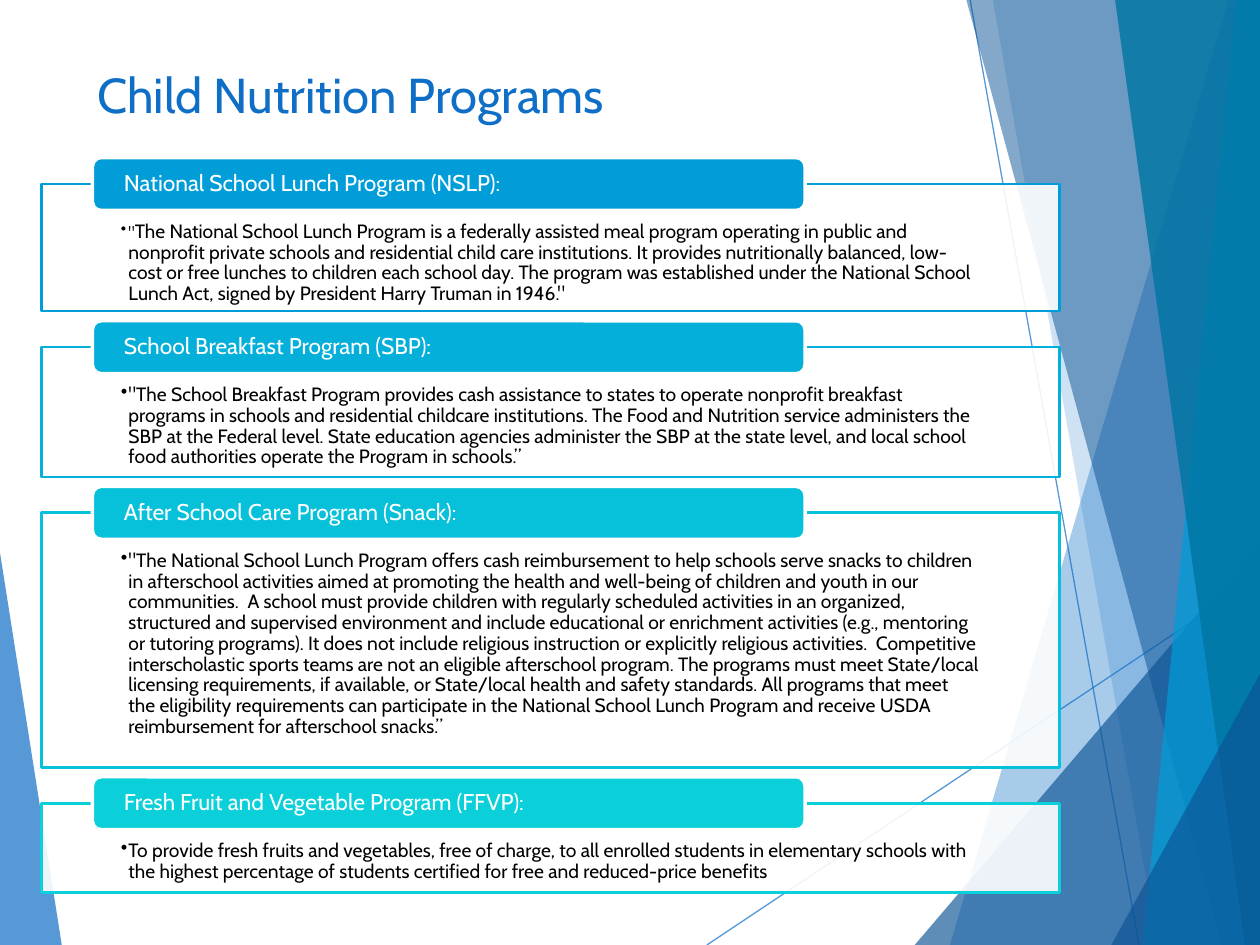
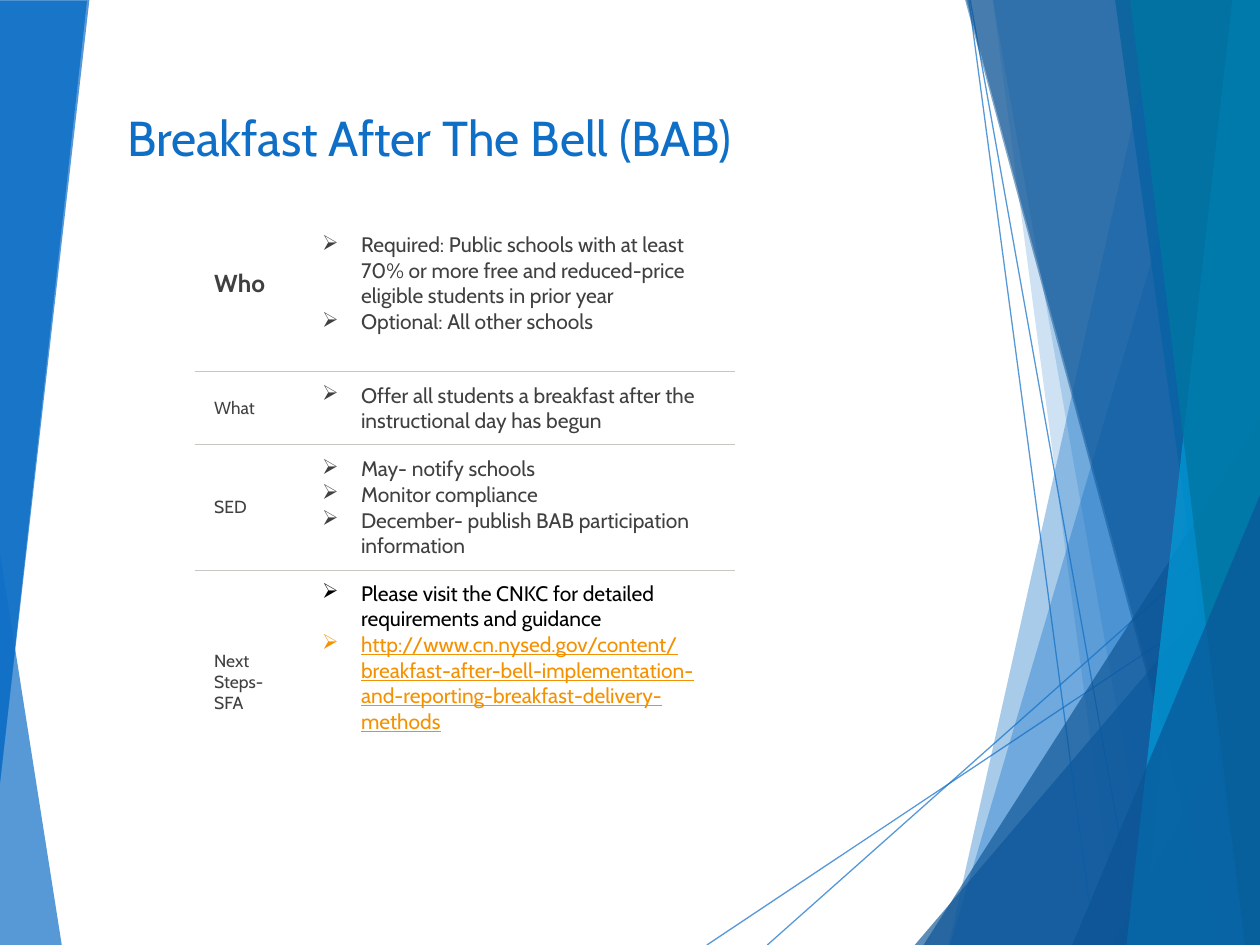
from lxml.etree import SubElement
from pptx import Presentation
from pptx.dml.color import RGBColor
from pptx.enum.shapes import MSO_CONNECTOR, MSO_SHAPE
from pptx.enum.text import MSO_ANCHOR, PP_ALIGN
from pptx.oxml.ns import qn
from pptx.util import Emu, Inches, Pt

WIDTH, HEIGHT = Inches(10), Inches(7.5)
FONT = "Cabin"
COLORS = {
    "blue": "0F6FC6", "navy": "0B5394", "sky": "009DD9", "teal": "0076A3",
    "lunch": "009DD9", "breakfast": "04AFD9", "snack": "07C0D9", "fruit": "0BD0D9",
    "white": "FFFFFF", "black": "000000", "gray": "404040",
    "rule": "C7C6C1", "link": "F49100",
}

BACKDROP = [
    ("ribbon", 0, 58.5, 4.9, 100, "blue", 70),
    ("line", 56.1, 100, 100, 61, "blue", 70),
    ("line", 77, 0, 90.4, 100, "blue", 70),
    ("ribbon", 97.5, 0, 75.4, 100, "blue", 36),
    ("ribbon", 78.8, 0, 91.9, 100, "blue", 20),
    ("wedge", 100, 57.2, 72.6, 100, "navy", 66),
    ("ribbon", 76.7, 0, 97, 100, "navy", 50),
    ("ribbon", 98.1, 0, 90.7, 100, "sky", 70),
    ("ribbon", 88.5, 0, 98.8, 100, "teal", 82),
    ("wedge", 100, 71.3, 88.2, 100, "navy", 66),
]
OVERLAY = [
    ("ribbon", 7.1, 0, 0, 82.9, "blue", 70),
    ("line", 76.9, 0, 86.9, 100, "blue", 70),
    ("line", 100, 53.7, 60.9, 100, "blue", 70),
    ("ribbon", 92.1, 0, 75.3, 100, "blue", 36),
    ("ribbon", 78.8, 0, 88.7, 100, "blue", 20),
    ("wedge", 100, 44.4, 73.3, 100, "navy", 66),
    ("ribbon", 76.6, 0, 96.8, 100, "navy", 50),
    ("ribbon", 97.8, 0, 89.4, 100, "sky", 70),
    ("ribbon", 89.7, 0, 98.8, 100, "teal", 80),
    ("wedge", 100, 52.4, 85.1, 100, "navy", 66),
    ("flipped", 6.9, 0.1, 0, 82.8, "blue", 85),
]

PROGRAMS = [
    (13.47, "lunch", "National School Lunch Program (NSLP):", [
        ("\"", 9),
        ("The National School Lunch Program is a federally assisted meal program operating in "
         "public and nonprofit private schools and residential child care institutions. It "
         "provides nutritionally balanced, low-cost or free lunches to children each school day. "
         "The program was established under the National School Lunch Act, signed by President "
         "Harry Truman in 1946.\"", 11)]),
    (13.73, "breakfast", "School Breakfast Program (SBP):", [
        ("\"The School Breakfast Program provides cash assistance to states to operate nonprofit "
         "breakfast programs in schools and residential childcare institutions. The Food and "
         "Nutrition service administers the SBP at the Federal level. State education agencies "
         "administer the SBP at the state level, and local school food authorities operate the "
         "Program in schools.”", 11)]),
    (26.93, "snack", "After School Care Program (Snack):", [
        ("\"The National School Lunch Program offers cash reimbursement to help schools serve "
         "snacks to children in afterschool activities aimed at promoting the health and "
         "well-being of children and youth in our communities.  A school must provide children "
         "with regularly scheduled activities in an organized, structured and supervised "
         "environment and include educational or enrichment activities (e.g., mentoring or "
         "tutoring programs). ", 11),
        ("It does not include religious instruction or explicitly religious "
         "activities.  Competitive interscholastic sports teams are not an eligible afterschool "
         "program. The programs must meet State/local licensing requirements, if available, or "
         "State/local health and safety standards. All programs that meet the eligibility "
         "requirements can participate in the National School Lunch Program and receive USDA "
         "reimbursement for afterschool snacks.”", 11)]),
    (9.47, "fruit", "Fresh Fruit and Vegetable Program (FFVP):", [
        ("To provide fresh fruits and vegetables, free of charge, to all enrolled students in "
         "elementary schools with the highest percentage of students certified for free and "
         "reduced-price benefits", 11)]),
]

BELL_ROWS = [
    (18.67, ["Who"], [
        ("Required: Public schools with at least 70% or more free and reduced-price eligible "
         "students in prior year", "gray"),
        ("Optional: All other schools", "gray")]),
    (7.73, ["What"], [
        ("Offer all students a breakfast after the instructional day has begun", "gray")]),
    (13.33, ["SED"], [
        ("May- notify schools", "gray"),
        ("Monitor compliance", "gray"),
        ("December- publish BAB participation information", "gray")]),
    (23.6, ["Next Steps-", "SFA"], [
        ("Please visit the CNKC for detailed requirements and guidance", "black"),
        ("http://www.cn.nysed.gov/content/breakfast-after-bell-implementation-and-reporting-"
         "breakfast-delivery-methods", "link")]),
]


def rgb(name):
    """Return a palette colour."""
    return RGBColor.from_string(COLORS[name])


def px(share):
    """Turn a percentage of the slide width into a length."""
    return Emu(round(WIDTH * share / 100))


def py(share):
    """Turn a percentage of the slide height into a length."""
    return Emu(round(HEIGHT * share / 100))


def fade(shape, percent):
    """Set the opacity of a shape's first colour."""
    color = shape._element.spPr.find(".//" + qn("a:srgbClr"))
    SubElement(color, qn("a:alpha"), val=str(percent * 1000))


def paint(shape, fill, line=None, width=0):
    """Give a shape a flat fill and an optional outline."""
    shape.shadow.inherit = False
    shape.fill.solid()
    shape.fill.fore_color.rgb = rgb(fill)
    if line:
        shape.line.color.rgb = rgb(line)
        shape.line.width = Pt(width)
    else:
        shape.line.fill.background()


def add_run(p, text, size, color, bold=False):
    """Append one formatted run."""
    r = p.add_run()
    r.text = text
    r.font.name, r.font.size, r.font.bold = FONT, Pt(size), bold
    r.font.color.rgb = rgb(color)
    return r


def paragraphs(tf, items):
    """Yield one paragraph of a text frame for each item."""
    for i, item in enumerate(items):
        yield (tf.add_paragraph() if i else tf.paragraphs[0]), item


def set_bullet(p, char, indent):
    """Give a paragraph a hanging bullet."""
    pPr = p._p.get_or_add_pPr()
    pPr.set("marL", str(Inches(indent)))
    pPr.set("indent", str(-Inches(indent)))
    SubElement(pPr, qn("a:buChar"), char=char)


def set_insets(target, left, top, right, bottom):
    """Set the four text margins in inches."""
    target.margin_left, target.margin_top = Inches(left), Inches(top)
    target.margin_right, target.margin_bottom = Inches(right), Inches(bottom)


def draw_facets(s, facets):
    """Draw the translucent bands, wedges and thin lines at the slide edges."""
    for kind, x1, y1, x2, y2, color, opacity in facets:
        if kind == "line":
            sp = s.shapes.add_connector(MSO_CONNECTOR.STRAIGHT, px(x1), py(y1), px(x2), py(y2))
            sp.line.color.rgb, sp.line.width = rgb(color), Pt(0.75)
            SubElement(sp._element.spPr, qn("a:effectLst"))
        else:
            if kind == "ribbon":
                edge = 0 if x1 < 50 else 100
                corners = dict.fromkeys([(x1, y1), (x2, y2), (edge, y2), (edge, y1)])
                start, *rest = [(px(x), py(y)) for x, y in corners]
                builder = s.shapes.build_freeform(*start)
                builder.add_line_segments(rest, close=True)
                sp = builder.convert_to_shape()
            else:
                sp = s.shapes.add_shape(MSO_SHAPE.ISOSCELES_TRIANGLE,
                                        px(x2), py(y1), px(x1 - x2), py(y2 - y1))
                sp.adjustments[0] = 1
                sp.rotation = 180 if kind == "flipped" else 0
            paint(sp, color)
        fade(sp, opacity)


def add_base(prs, title, box, anchor, overlay=()):
    """Add a slide with the shared backdrop and title style."""
    s = prs.slides.add_slide(prs.slide_layouts[5])
    draw_facets(s, BACKDROP)
    draw_facets(s, overlay)
    sp = s.shapes.title
    x, y, w, h = box
    sp.left, sp.top, sp.width, sp.height = px(x), py(y), px(w), py(h)
    tf = sp.text_frame
    tf.word_wrap, tf.vertical_anchor = True, anchor
    p = tf.paragraphs[0]
    p.alignment = PP_ALIGN.LEFT
    add_run(p, title, 28, "blue")
    return s


def add_program(s, box, color, name, runs):
    """Add a framed description with its label centred on the top edge."""
    x, y, w, h = box
    sp = s.shapes.add_shape(MSO_SHAPE.RECTANGLE, px(x), py(y), px(w), py(h))
    paint(sp, "white", color, 1.5)
    fade(sp, 90)
    tf = sp.text_frame
    tf.word_wrap, tf.vertical_anchor = True, MSO_ANCHOR.TOP
    set_insets(tf, 0.63, 0.3, 0.63, 0.07)
    p = tf.paragraphs[0]
    p.alignment, p.line_spacing = PP_ALIGN.LEFT, 0.9
    set_bullet(p, "•", 0.06)
    for text, size in runs:
        add_run(p, text, size, "black")

    label_h = 5.6
    sp = s.shapes.add_shape(MSO_SHAPE.ROUNDED_RECTANGLE, px(x + 0.05 * w),
                            py(y - label_h / 2), px(0.7 * w), py(label_h))
    paint(sp, color, "white", 2)
    tf = sp.text_frame
    tf.word_wrap, tf.vertical_anchor = True, MSO_ANCHOR.MIDDLE
    set_insets(tf, 0.23, 0, 0.23, 0)
    p = tf.paragraphs[0]
    p.alignment, p.line_spacing = PP_ALIGN.LEFT, 0.9
    add_run(p, name, 13, "white")


def add_programs_slide(prs):
    """Build the stack of nutrition programs."""
    s = add_base(prs, "Child Nutrition Programs", (6.7, 4.4, 69.4, 11.07), MSO_ANCHOR.MIDDLE)
    top, gap = 19.47, 3.8
    for height, color, name, runs in PROGRAMS:
        add_program(s, (3.3, top, 80.8, height), color, name, runs)
        top += height + gap


def add_rule(cell, side):
    """Draw one thin border of a cell."""
    ln = SubElement(cell._tc.get_or_add_tcPr(), qn("a:" + side), w=str(Pt(0.75)))
    SubElement(SubElement(ln, qn("a:solidFill")), qn("a:srgbClr"), val=COLORS["rule"])


def add_bell_table(s, box):
    """Add the table of who, what and next steps."""
    x, y, w, h = box
    last = len(BELL_ROWS) - 1
    table = s.shapes.add_table(last + 1, 2, px(x), py(y), px(w), py(h)).table
    table.first_row = table.horz_banding = False
    table.columns[0].width, table.columns[1].width = px(0.2 * w), px(0.8 * w)
    for i, (height, labels, items) in enumerate(BELL_ROWS):
        table.rows[i].height = py(height)
        label, detail = table.cell(i, 0), table.cell(i, 1)
        for cell in (label, detail):
            cell.vertical_anchor = MSO_ANCHOR.MIDDLE
            set_insets(cell, 0.15, 0.08, 0.11, 0.08)
            if i > 0:
                add_rule(cell, "lnT")
            if i < last:
                add_rule(cell, "lnB")
            cell.fill.background()
        for p, text in paragraphs(label.text_frame, labels):
            add_run(p, text, 10 if i else 14, "gray", i == 0)
        for p, (text, color) in paragraphs(detail.text_frame, items):
            set_bullet(p, "➢", 0.31)
            add_run(p, text, 12, color).font.underline = color == "link"
    detail.vertical_anchor = MSO_ANCHOR.TOP


def add_bell_slide(prs):
    """Build the breakfast slide."""
    s = add_base(prs, "Breakfast After The Bell (BAB)", (9.1, 6.67, 65.8, 11.6),
                 MSO_ANCHOR.BOTTOM, OVERLAY)
    add_bell_table(s, (15.5, 20.67, 42.8, 63.33))


def main():
    """Build and save the presentation."""
    prs = Presentation()
    prs.slide_width, prs.slide_height = WIDTH, HEIGHT
    add_programs_slide(prs)
    add_bell_slide(prs)
    prs.save("out.pptx")


if __name__ == "__main__":
    main()
